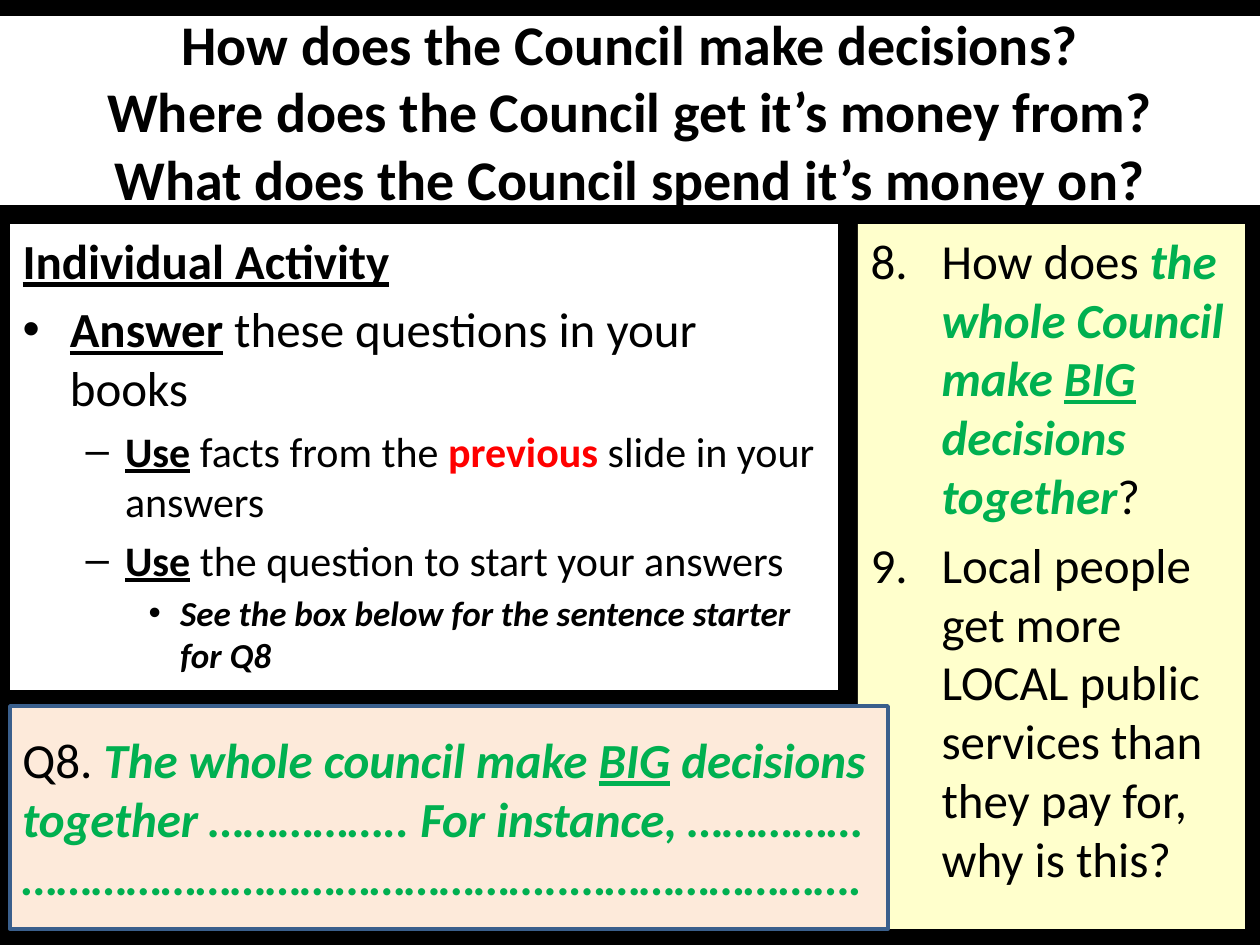
"""Build the slide of Council questions with an individual activity."""
from lxml.etree import SubElement
from pptx import Presentation
from pptx.dml.color import RGBColor
from pptx.enum.shapes import MSO_SHAPE
from pptx.enum.text import MSO_ANCHOR, MSO_AUTO_SIZE, PP_ALIGN
from pptx.oxml.ns import qn
from pptx.util import Pt

THEME = {
    "font": "Calibri",
    "back": "000000", "white": "FFFFFF", "cream": "FFFFCC", "peach": "FDEADA",
    "edge": "3A5F8C", "ink": "000000", "red": "FF0000", "green": "00B050",
    "title": 32, "levels": (28, 24, 20), "line": 2,
}
STYLES = {
    "plain": {},
    "bold": {"bold": True},
    "key": {"bold": True, "underline": True},
    "alert": {"bold": True, "ink": "red"},
    "note": {"bold": True, "italic": True},
    "big": {"bold": True, "italic": True, "ink": "green"},
    "bigkey": {"bold": True, "italic": True, "ink": "green", "underline": True},
}
TITLE = [
    (0, None, [(text, "bold")]) for text in (
        "How does the Council make decisions?",
        "Where does the Council get it’s money from?",
        "What does the Council spend it’s money on?",
    )
]
TASKS = [
    (0, "none", [("Individual Activity", "key")]),
    (0, None, [("Answer", "key"), (" these questions in your books", "plain")]),
    (1, None, [("Use", "key"), (" facts from the ", "plain"),
               ("previous", "alert"), (" slide in your answers", "plain")]),
    (1, None, [("Use", "key"), (" the question to start your answers", "plain")]),
    (2, None, [("See the box below for the sentence starter for Q8", "note")]),
]
ASKS = [
    (0, "count", [("How does ", "plain"), ("the whole Council make ", "big"),
                  ("BIG", "bigkey"), (" decisions together", "big"), ("?", "plain")]),
    (0, "count", [("Local people get more LOCAL public services than they pay for, "
                   "why is this?", "plain")]),
]
START = [
    (0, None, [("Q8. ", "plain"), ("The whole council make ", "big"), ("BIG", "bigkey"),
               (" decisions together …………….. For instance, …………… "
                "………………………………………..…………………….", "big")]),
]
MARKS = {
    "none": (0, "a:buNone", {}),
    "count": (71, "a:buAutoNum", {"type": "arabicPeriod", "startAt": "8"}),
}
WIDE, HIGH = 1260, 945
SCALE = 914400 / 126


def emu(px):
    return round(px * SCALE)


def tint(name):
    return RGBColor.from_string(THEME[name])


def mark(para, kind):
    left, tag, attrs = MARKS[kind]
    props = para._p.get_or_add_pPr()
    props.set("marL", str(emu(left)))
    props.set("indent", str(emu(-left)))
    SubElement(props, qn(tag), attrs)


def write(frame, paras, sizes, align):
    for i, (level, kind, runs) in enumerate(paras):
        para = frame.add_paragraph() if i else frame.paragraphs[0]
        para.level, para.alignment = level, align
        if kind:
            mark(para, kind)
        for text, style in runs:
            run = para.add_run()
            run.text = text
            look = {"name": THEME["font"], "size": Pt(sizes[level]),
                    "bold": False, **STYLES[style]}
            run.font.color.rgb = tint(look.pop("ink", "ink"))
            for key, value in look.items():
                setattr(run.font, key, value)


def place(shape, box, fill, paras, sizes, align, anchor):
    for key, px in zip(("left", "top", "width", "height"), box):
        setattr(shape, key, emu(px))
    shape.fill.solid()
    shape.fill.fore_color.rgb = tint(fill)
    frame = shape.text_frame
    form = {"word_wrap": True, "auto_size": MSO_AUTO_SIZE.NONE,
            "vertical_anchor": anchor}
    for key, value in form.items():
        setattr(frame, key, value)
    write(frame, paras, sizes, align)


def main():
    deck = Presentation()
    deck.slide_width, deck.slide_height = emu(WIDE), emu(HIGH)
    slide = deck.slides.add_slide(deck.slide_layouts[3])
    slide.background.fill.solid()
    slide.background.fill.fore_color.rgb = tint("back")
    for shape in list(slide.placeholders)[3:]:
        shape._element.getparent().remove(shape._element)
    head, tasks, asks = slide.placeholders
    start = slide.shapes.add_shape(MSO_SHAPE.RECTANGLE, 0, 0, 0, 0)
    start.shadow.inherit = False
    start.line.color.rgb = tint("edge")
    start.line.width = Pt(THEME["line"])

    levels = THEME["levels"]
    left, mid, top = PP_ALIGN.LEFT, MSO_ANCHOR.MIDDLE, MSO_ANCHOR.TOP
    place(head, (0, 16, WIDE, 189), "white", TITLE, [THEME["title"]],
          PP_ALIGN.CENTER, mid)
    place(tasks, (10, 224, 828, 466), "white", TASKS, levels, left, top)
    place(asks, (858, 224, 387, 705), "cream", ASKS, levels, left, top)
    place(start, (10, 706, 878, 223), "peach", START, levels, left, mid)
    deck.save("out.pptx")


if __name__ == "__main__":
    main()
